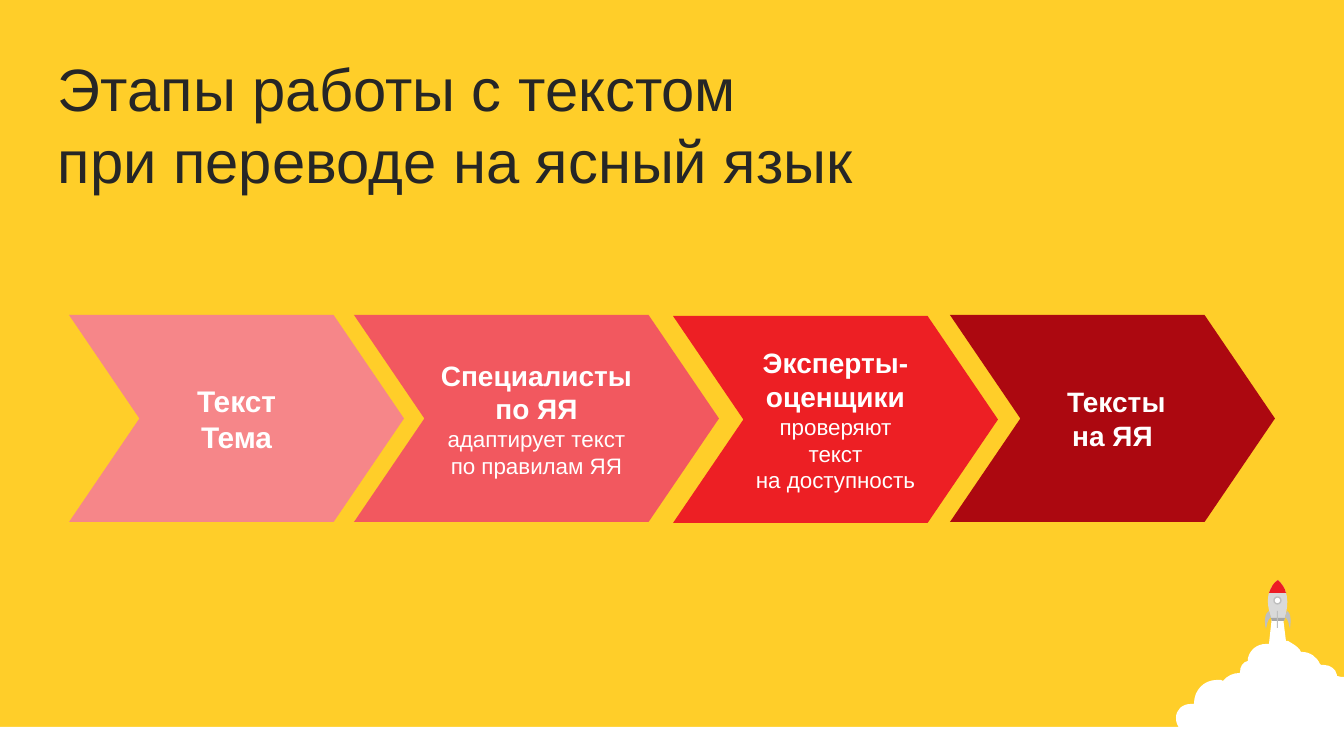
from lxml import etree
from pptx import Presentation
from pptx import util as u
from pptx.dml.color import RGBColor
from pptx.enum import shapes, text
from pptx.oxml import ns

PX = 914400 / 100.8
FONT = "Arial"
COLORS = {
    "yellow": "FFCE29", "white": "FFFFFF", "ink": "262626",
    "pink": "F68689", "coral": "F2585F", "red": "ED1F24", "maroon": "AC0810",
    "body": "D9D9D9", "base": "A6A6A6", "nose": "ED1C24", "fin": "BFBFBF",
}
STEPS = [
    (0, 0, 335, "pink", 21.3, ["Текст", "Тема"], None),
    (285, 0, 365, "coral", 20, ["Специалисты по ЯЯ"],
     "адаптирует текст\vпо правилам ЯЯ"),
    (604, 1, 325, "red", 20, ["Эксперты-оценщики"],
     "проверяют текст\vна доступность "),
    (881, 0, 325, "maroon", 20, [" Тексты", "на ЯЯ"], None),
]
CLOUD = [
    (96, 37), (107, 37), (110, 61), (112, 61), (117, 64, 121, 66, 124, 70),
    (125, 72), (126, 72), (134, 72, 141, 77, 144, 84), (145, 85), (148, 85),
    (154, 85, 160, 89, 161, 95), (161, 96), (165, 97), (168, 97), (168, 172),
    (165, 172), (160, 172, 154, 171, 150, 168), (147, 168),
    (145, 170, 142, 171, 139, 171), (135, 171, 131, 169, 128, 167), (126, 165),
    (124, 169, 119, 172, 114, 172), (110, 172, 106, 170, 103, 168), (99, 168),
    (94, 172, 88, 174, 80, 174), (64, 174, 56, 167, 50, 161),
    (48, 163, 42, 165, 38, 164), (33, 162, 25, 159, 23, 152),
    (21, 152, 18, 153, 15, 153), (6, 153, 0, 147, 0, 138),
    (0, 130, 6, 124, 15, 124), (18, 124), (18, 110, 28, 100, 41, 100),
    (45, 100), (47, 101), (51, 96, 57, 93, 64, 93), (64, 86, 67, 82, 72, 81),
    (72, 78), (74, 70, 81, 64, 90, 64), (93, 64),
]
BODY = [(96, 41), (92, 28, 87, 12, 102, 0), (116, 13, 111, 31, 108, 41)]
BASE = [(95, 38), (109, 38), (108, 41), (96, 41)]
NOSE = [(102, 0), (106, 4, 109, 8, 110, 13), (111, 13), (93, 13),
        (95, 8, 97, 3, 102, 0)]
LEFT_FIN = [(93, 31), (95, 37), (91, 40, 91, 46, 90, 49),
            (89, 45, 87, 35, 93, 31)]
RIGHT_FIN = [(111, 31), (109, 37), (113, 40, 113, 46, 114, 49),
             (114, 45, 117, 35, 111, 31)]


def emu(px):
    """Turn pixels into EMU."""
    return u.Emu(round(px * PX))


def rgb(name):
    """Look up a named colour."""
    return RGBColor.from_string(COLORS[name])


def paint(sp, fill, line=None):
    """Give a shape a flat fill, an optional outline and no shadow."""
    sp.shadow.inherit = False
    sp.fill.solid()
    sp.fill.fore_color.rgb = rgb(fill)
    if line:
        sp.line.color.rgb = rgb(line)
        sp.line.width = u.Pt(1)
    else:
        sp.line.fill.background()


def add_preset(parent, kind, box, fill, line=None):
    """Add a painted preset shape in a pixel box."""
    sp = parent.add_shape(kind, *map(emu, box))
    paint(sp, fill, line)
    return sp


def style(p, size, color, bold=False):
    """Set the font of a paragraph."""
    p.font.name, p.font.size, p.font.bold = FONT, u.Pt(size), bold
    p.font.color.rgb = rgb(color)


def flatten(segs, steps=10):
    """Sample lines and cubic curves to find the extent of an outline."""
    points = [segs[0]]
    for seg in segs[1:]:
        if len(seg) == 2:
            points.append(seg)
            continue
        start = points[-1]
        for i in range(1, steps + 1):
            t = i / steps
            points.append(tuple(
                (1 - t) ** 3 * start[k] + 3 * (1 - t) ** 2 * t * seg[k]
                + 3 * (1 - t) * t ** 2 * seg[k + 2] + t ** 3 * seg[k + 4]
                for k in (0, 1)))
    return points


def add_outline(parent, left, top, segs, fill):
    """Add a closed outline of lines and true curves from the given corner."""
    points = [(emu(left + x), emu(top + y)) for x, y in flatten(segs)]
    builder = parent.build_freeform(*points[0], scale=1.0)
    builder.add_line_segments(points[1:], close=True)
    sp = builder.convert_to_shape()
    paint(sp, fill)
    x0, y0 = (min(values) for values in zip(*points))
    outline = next(sp._element.iter(ns.qn("a:path")))
    for child in list(outline):
        outline.remove(child)
    for i, seg in enumerate(segs):
        tag = "a:cubicBezTo" if len(seg) == 6 else "a:lnTo"
        step = etree.SubElement(outline, ns.qn(tag if i else "a:moveTo"))
        for x, y in zip(seg[::2], seg[1::2]):
            etree.SubElement(step, ns.qn("a:pt"), x=str(emu(left + x) - x0),
                             y=str(emu(top + y) - y0))
    etree.SubElement(outline, ns.qn("a:close"))


def add_title(s, left, top, width, height):
    """Write the two-line heading."""
    tf = s.shapes.add_textbox(*map(emu, (left, top, width, height))).text_frame
    tf.word_wrap = True
    tf.vertical_anchor = text.MSO_ANCHOR.MIDDLE
    p = tf.paragraphs[0]
    p.text = "Этапы работы с текстом\vпри переводе на ясный язык"
    style(p, 42.7, "ink")


def add_steps(s, left, top, height):
    """Draw the row of chevron steps."""
    for dx, dy, width, fill, size, heads, detail in STEPS:
        sp = add_preset(s.shapes, shapes.MSO_SHAPE.CHEVRON,
                        (left + dx, top + dy, width, height), fill)
        sp.adjustments[0] = 0.34
        tf = sp.text_frame
        tf.word_wrap = True
        tf.vertical_anchor = text.MSO_ANCHOR.MIDDLE
        lines = [(head, size, True) for head in heads]
        if detail:
            lines.append((detail, 16, False))
        for i, (words, points, bold) in enumerate(lines):
            p = tf.add_paragraph() if i else tf.paragraphs[0]
            p.text = words
            p.alignment = text.PP_ALIGN.CENTER
            style(p, points, "white", bold)


def add_rocket(s, left, top):
    """Draw the rocket above its cloud of smoke."""
    group = s.shapes.add_group_shape().shapes
    for segs, fill in ((CLOUD, "white"), (BODY, "body"), (BASE, "base"),
                       (NOSE, "nose")):
        add_outline(group, left, top, segs, fill)
    add_preset(group, shapes.MSO_SHAPE.OVAL,
               (left + 98, top + 17, 7, 7), "white", "fin")
    add_preset(group, shapes.MSO_SHAPE.RECTANGLE,
               (left + 101, top + 31, 1, 17), "fin")
    for fin in (LEFT_FIN, RIGHT_FIN):
        add_outline(group, left, top, fin, "fin")


def main():
    """Build the slide and save it."""
    prs = Presentation()
    prs.slide_width, prs.slide_height = emu(1344), emu(756)
    s = prs.slides.add_slide(prs.slide_layouts[6])
    s.background.fill.solid()
    s.background.fill.fore_color.rgb = rgb("yellow")
    add_preset(s.shapes, shapes.MSO_SHAPE.RECTANGLE,
               (0, 727, 1344, 29), "white")
    add_rocket(s, 1176, 580)
    add_title(s, 48, 81, 1296, 85)
    add_steps(s, 69, 315, 207)
    prs.save("out.pptx")


if __name__ == "__main__":
    main()
